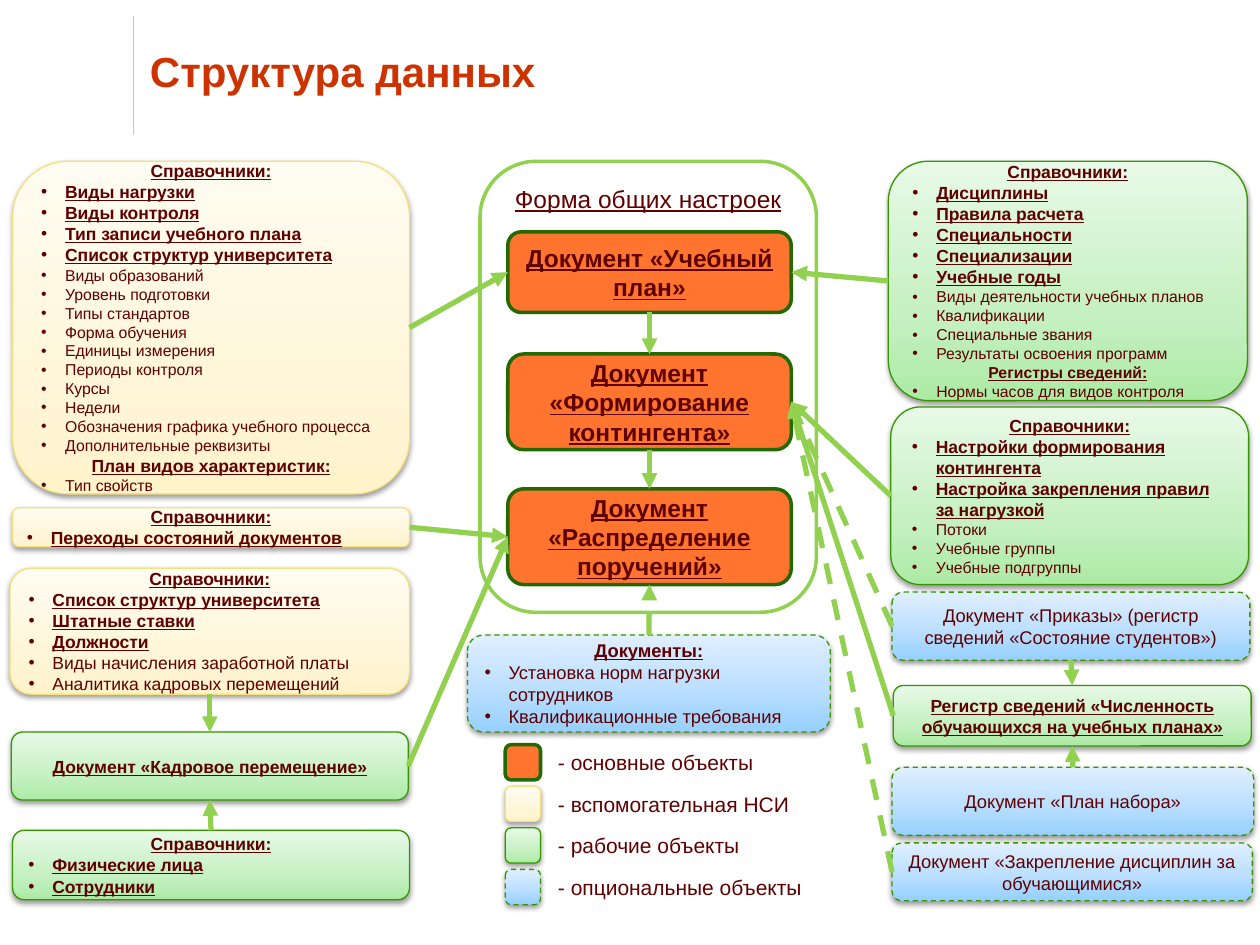
from copy import deepcopy

from lxml import etree
from pptx import Presentation
from pptx.dml.color import RGBColor
from pptx.enum.dml import MSO_LINE
from pptx.enum.shapes import MSO_CONNECTOR, MSO_SHAPE
from pptx.enum.text import MSO_ANCHOR, MSO_AUTO_SIZE, PP_ALIGN
from pptx.oxml.ns import qn
from pptx.util import Inches, Pt

ROUNDED = MSO_SHAPE.ROUNDED_RECTANGLE
STRAIGHT = MSO_CONNECTOR.STRAIGHT
DASH = MSO_LINE.DASH
MIDDLE, TOP_ANCHOR = MSO_ANCHOR.MIDDLE, MSO_ANCHOR.TOP
CENTER, LEFT_ALIGN = PP_ALIGN.CENTER, PP_ALIGN.LEFT
NO_AUTOFIT = MSO_AUTO_SIZE.NONE
TOP, LEFT, BOTTOM, RIGHT = range(4)

TEXT, GREEN, WHITE = "5F0000", "92D050", "FFFFFF"
STYLES = {
    "frame": ([(0, WHITE)], GREEN, 2, False),
    "main": ([(0, "FF742F")], "246800", 2, False),
    "reference": ([(0, "FFF3CA"), (0.35, "FFF6DA"), (1, "FFFCF1")], "F6E07D", 0.75, False),
    "working": ([(0, "ACEBA5"), (0.35, "C5F0C1"), (1, "E8FAE7")], "359600", 0.75, False),
    "optional": ([(0, "96D0FF"), (0.5, "BFE1FF"), (1, "E0EFFF")], "359600", 0.75, True),
}


def color(value):
    """Turn a hex string into a colour."""
    return RGBColor.from_string(value)


def inches(box):
    """Turn a box of numbers into lengths."""
    return [Inches(length) for length in box]


def heading(text, size=10):
    """Describe a centred, bold, underlined paragraph."""
    return [(text, size, True, True, False)]


def plain(text, size=10.5, underline=False):
    """Describe a centred regular paragraph."""
    return [(text, size, False, underline, False)]


def strong(*texts):
    """Describe bold, underlined list items."""
    return [(text, 10, True, True, True) for text in texts]


def items(*texts, size=9):
    """Describe regular list items."""
    return [(text, size, False, False, True) for text in texts]


def set_font(para, size, value, bold=False, underline=False):
    """Format the font of a paragraph."""
    font = para.font
    font.name, font.size = "Arial", Pt(size)
    font.bold, font.underline = bold, underline
    font.color.rgb = color(value)


def add_bullet(para):
    """Give a paragraph a hanging round bullet."""
    properties = para._p.get_or_add_pPr()
    properties.set("marL", str(Inches(0.19)))
    properties.set("indent", str(-Inches(0.19)))
    etree.SubElement(properties, qn("a:buFont")).set("typeface", "Arial")
    etree.SubElement(properties, qn("a:buChar")).set("char", "•")


def write(frame, lines):
    """Fill a text frame with described paragraphs."""
    for index, (text, size, bold, underline, bulleted) in enumerate(lines):
        para = frame.paragraphs[0] if index == 0 else frame.add_paragraph()
        para.text = text
        para.alignment = LEFT_ALIGN if bulleted else CENTER
        if bulleted:
            add_bullet(para)
        set_font(para, size, TEXT, bold, underline)


def add_shadow(shape):
    """Put a soft shadow below a shape."""
    effects = shape._element.spPr.find(qn("a:effectLst"))
    shadow = etree.SubElement(effects, qn("a:outerShdw"), blurRad=str(Pt(3.1)),
                              dist=str(Pt(1.6)), dir="5400000", rotWithShape="0")
    black = etree.SubElement(shadow, qn("a:srgbClr"), val="000000")
    etree.SubElement(black, qn("a:alpha"), val="38000")


def fill_gradient(shape, stops):
    """Fill a shape with a three-colour gradient rising from its foot."""
    shape.fill.gradient()
    shape.fill.gradient_angle = 90
    stop_list = shape._element.spPr.find(".//" + qn("a:gsLst"))
    stop_list.append(deepcopy(stop_list[0]))
    for stop, (position, value) in zip(shape.fill.gradient_stops, stops):
        stop.position = position
        stop.color.rgb = color(value)


def add_block(shapes, box, style, lines=(), anchor=MIDDLE):
    """Add a rounded block in one of the styles."""
    stops, outline, width, dashed = STYLES[style]
    shape = shapes.add_shape(ROUNDED, *inches(box))
    shape.shadow.inherit = False
    if len(stops) == 1:
        shape.fill.solid()
        shape.fill.fore_color.rgb = color(stops[0][1])
    else:
        fill_gradient(shape, stops)
        add_shadow(shape)
    shape.line.color.rgb = color(outline)
    shape.line.width = Pt(width)
    if dashed:
        shape.line.dash_style = DASH
    shape.text_frame.word_wrap = True
    shape.text_frame.vertical_anchor = anchor
    write(shape.text_frame, lines)
    return shape


def add_line(page, ends, value, width):
    """Add a straight line without a shadow."""
    line = page.shapes.add_connector(STRAIGHT, *inches(ends))
    line.line.color.rgb = color(value)
    line.line.width = Pt(width)
    etree.SubElement(line._element.spPr, qn("a:effectLst"))
    return line


def add_arrow(page, start, start_side, end, end_side, dashed=False):
    """Join the sides of two blocks with an arrow."""
    arrow = add_line(page, (0, 0, 1, 1), GREEN, 3)
    arrow.begin_connect(start, start_side)
    arrow.end_connect(end, end_side)
    if dashed:
        arrow.line.dash_style = DASH
    etree.SubElement(arrow.line._get_or_add_ln(), qn("a:tailEnd"), type="triangle")


def add_title(page, box):
    """Place the title and the rule beside it."""
    left, top, width, height = box
    title = page.shapes.title
    title.left, title.top, title.width, title.height = inches(box)
    frame = title.text_frame
    frame.text = "Структура данных"
    frame.auto_size, frame.vertical_anchor = NO_AUTOFIT, MIDDLE
    frame.paragraphs[0].alignment = LEFT_ALIGN
    set_font(frame.paragraphs[0], 24, "CC3300", bold=True)
    add_line(page, (left - 0.03, top + 0.04, left - 0.03, top + height + 0.04), "FFCC00", 1)


def add_column(page, left, top, blocks):
    """Stack blocks given by shift, drop, width, height, style and lines."""
    return [add_block(page.shapes, (left + shift, top + drop, width, height), style, lines)
            for shift, drop, width, height, style, lines in blocks]


def add_sources(page, left, top):
    """Place the left column."""
    return add_column(page, left, top, [
        (0.02, 0, 3.15, 2.64, "reference", heading("Справочники:")
         + strong("Виды нагрузки", "Виды контроля", "Тип записи учебного плана",
                  "Список структур университета")
         + items("Виды образований", "Уровень подготовки", "Типы стандартов", "Форма обучения",
                 "Единицы измерения", "Периоды контроля", "Курсы", "Недели",
                 "Обозначения графика учебного процесса", "Дополнительные реквизиты")
         + heading("План видов характеристик:") + items("Тип свойств")),
        (0.02, 2.75, 3.15, 0.31, "reference",
         heading("Справочники:") + strong("Переходы состояний документов")),
        (0, 3.23, 3.17, 1, "reference", heading("Справочники:")
         + strong("Список структур университета", "Штатные ставки", "Должности")
         + items("Виды начисления заработной платы", "Аналитика кадровых перемещений", size=10)),
        (0.01, 4.53, 3.15, 0.54, "working", heading("Документ «Кадровое перемещение»")),
        (0.02, 5.31, 3.15, 0.55, "working",
         heading("Справочники:") + strong("Физические лица", "Сотрудники")),
    ])


def add_core(page, left, top):
    """Place the settings frame, the main documents and the optional ones."""
    add_block(page.shapes, (left, top, 2.67, 3.58), "frame",
              plain("Форма общих настроек", 14, True), TOP_ANCHOR)
    return add_column(page, left, top, [
        (0.22, 0.56, 2.25, 0.64, "main", heading("Документ «Учебный план»", 14)),
        (0.22, 1.53, 2.25, 0.76, "main", heading("Документ «Формирование контингента»", 14)),
        (0.22, 2.6, 2.25, 0.76, "main", heading("Документ «Распределение поручений»", 14)),
        (-0.1, 3.76, 2.88, 0.77, "optional", heading("Документы:", 10.5)
         + items("Установка норм нагрузки сотрудников", "Квалификационные требования", size=10.5)),
    ])


def add_registers(page, left, top):
    """Place the right column."""
    return add_column(page, left, top, [
        (0, 0, 2.85, 1.9, "working", heading("Справочники:")
         + strong("Дисциплины", "Правила расчета", "Специальности", "Специализации",
                  "Учебные годы")
         + items("Виды деятельности учебных планов", "Квалификации", "Специальные звания",
                 "Результаты освоения программ")
         + heading("Регистры сведений:", 9) + items("Нормы часов для видов контроля")),
        (0.02, 1.95, 2.84, 1.41, "working", heading("Справочники:")
         + strong("Настройки формирования контингента",
                  "Настройка закрепления правил за нагрузкой")
         + items("Потоки", "Учебные группы", "Учебные подгруппы")),
        (0.03, 3.42, 2.84, 0.54, "optional",
         plain("Документ «Приказы» (регистр сведений «Состояние студентов»)")),
        (0.04, 4.16, 2.84, 0.48, "working",
         heading("Регистр сведений «Численность обучающихся на учебных планах»")),
        (0.03, 4.81, 2.87, 0.54, "optional", plain("Документ «План набора»")),
        (0.03, 5.41, 2.86, 0.46, "optional",
         plain("Документ «Закрепление дисциплин за обучающимися»")),
    ])


def add_legend(page, left, top):
    """Place the key to the block styles."""
    group = page.shapes.add_group_shape()
    entries = [("main", "- основные объекты"), ("reference", "- вспомогательная НСИ"),
               ("working", "- рабочие объекты"), ("optional", "- опциональные объекты")]
    for index, (style, text) in enumerate(entries):
        row = top + index * 0.33
        add_block(group.shapes, (left, row, 0.28, 0.28), style)
        label = group.shapes.add_textbox(*inches((left + 0.32, row - 0.01, 2.15, 0.3)))
        label.text_frame.word_wrap = False
        para = label.text_frame.paragraphs[0]
        para.text, para.alignment = text, LEFT_ALIGN
        set_font(para, 12, TEXT)


def main():
    """Build and save the slide."""
    deck = Presentation()
    deck.slide_width, deck.slide_height = Inches(10), Inches(7.5)
    page = deck.slides.add_slide(deck.slide_layouts[5])
    add_title(page, (1.09, 0.09, 8.71, 0.94))
    plan, cohort, duties, norms = add_core(page, 3.81, 1.28)
    general, states, staff, transfer, people = add_sources(page, 0.08, 1.28)
    subjects, groups, orders, numbers, intake, assignment = add_registers(page, 7.05, 1.28)
    for start, start_side, end, end_side, dashed in [
        (general, RIGHT, plan, LEFT, False), (states, RIGHT, duties, LEFT, False),
        (transfer, RIGHT, duties, LEFT, False), (staff, BOTTOM, transfer, TOP, False),
        (people, TOP, transfer, BOTTOM, False), (plan, BOTTOM, cohort, TOP, False),
        (cohort, BOTTOM, duties, TOP, False), (norms, TOP, duties, BOTTOM, True),
        (subjects, LEFT, plan, RIGHT, False), (orders, BOTTOM, numbers, TOP, False),
        (intake, TOP, numbers, BOTTOM, True), (assignment, LEFT, cohort, RIGHT, True),
        (numbers, LEFT, cohort, RIGHT, False), (groups, LEFT, cohort, RIGHT, False),
        (orders, LEFT, cohort, RIGHT, True),
    ]:
        add_arrow(page, start, start_side, end, end_side, dashed)
    add_legend(page, 4.01, 5.91)
    deck.save("out.pptx")


if __name__ == "__main__":
    main()
